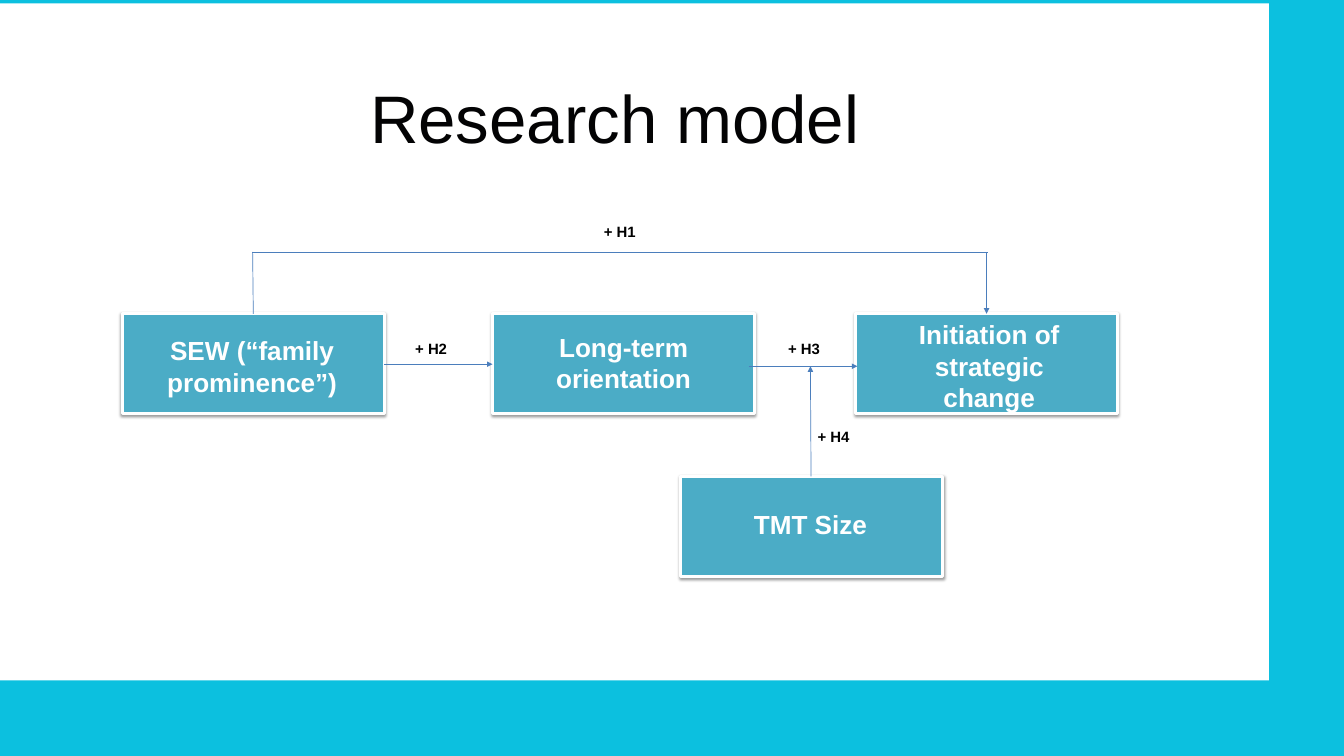
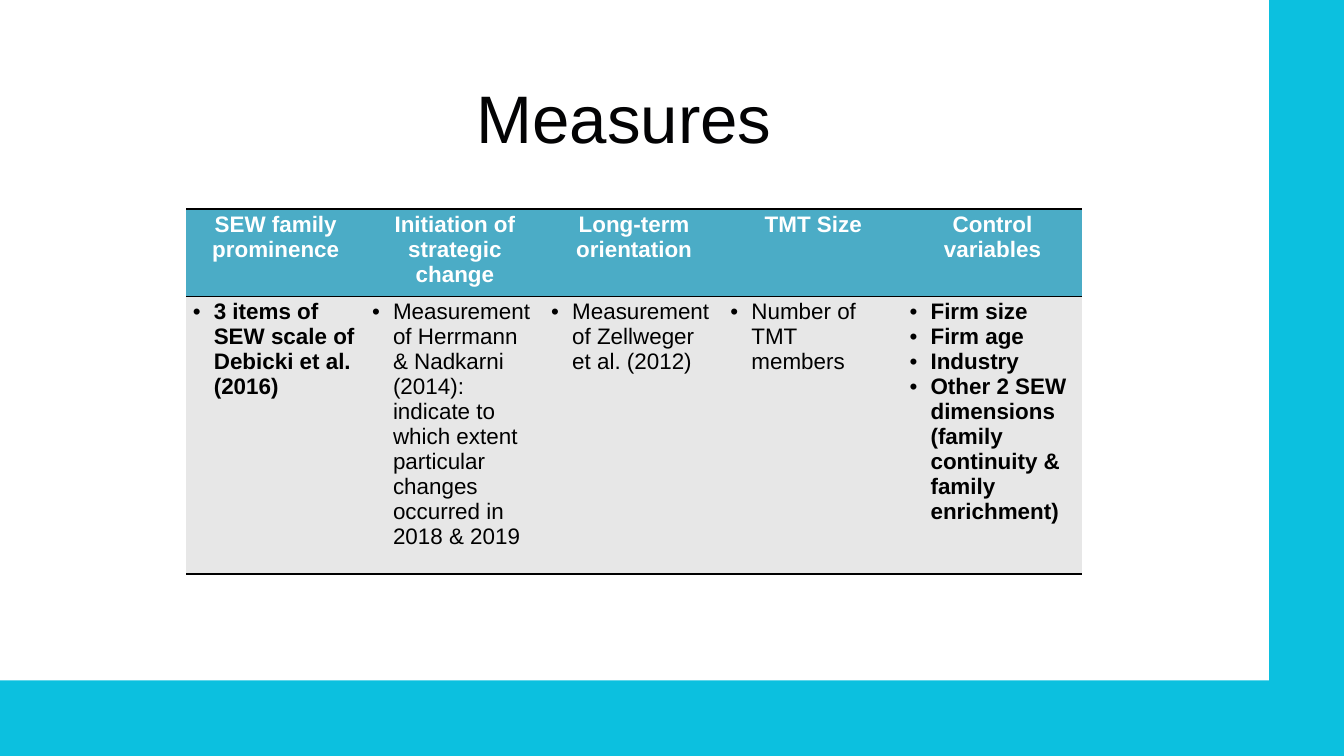
from dataclasses import dataclass

from lxml import etree
from pptx import Presentation
from pptx.dml.color import RGBColor
from pptx.enum import shapes, text
from pptx.oxml import parse_xml
from pptx.oxml.ns import nsdecls, qn
from pptx.util import Pt


@dataclass(frozen=True)
class Theme:
    back: str = "0CC0DF"
    panel: str = "FFFFFF"
    title: str = "030304"
    box: str = "4BACC6"
    line: str = "4B7EBC"
    cell: str = "E7E7E7"
    dark: str = "000000"
    light: str = "FFFFFF"
    font: str = "Arial"
    head: int = 72
    name: int = 28
    body: int = 24
    tag: int = 16


LOOK = Theme()
PLAIN_GRID = "{2D5ABB26-0587-4C30-8999-92F81FD0307C}"
MID, LEFT = text.PP_ALIGN.CENTER, text.PP_ALIGN.LEFT
BOX_W, BOX_H, ROW_Y = 280.8, 107.3, 336.2
LABEL_W = 233.3
TAG_SIZE = (79.2, 26.6)

# Box left and top, then label left, top and height
BOXES = [
    ("SEW (“family prominence”)", 131, ROW_Y, 153.4, 355, 75),
    ("Long-term orientation", 527.8, ROW_Y, 551.5, 351.4, 75),
    ("Initiation of strategic change", 916.6, ROW_Y, 943.2, 337.7, 108.7),
    ("TMT Size", 729.4, 510.5, 751.7, 541.4, 41),
]
# Start, end, arrowhead
LINKS = [
    ((411.8, 390.2), (527.8, 390.2), True),
    ((802, 392.4), (918.7, 392.4), True),
    ((271.4, ROW_Y), (270.7, 270), False),
    ((270, 270), (1058.4, 270), False),
    ((1057, 270), (1057, ROW_Y), True),
    ((869, 510.5), (868.3, 392.4), True),
]
TAGS = [
    ("+ H1", 640, 235.4),
    ("+ H2", 437.8, 360.7),
    ("+ H3", 837.4, 360),
    ("+ H4", 869, 454.3),
]
# Heading, bullets, bold bullets
MEASURES = [
    ("SEW family prominence",
     ["3 items of SEW scale of Debicki et al. (2016)"], True),
    ("Initiation of strategic change",
     ["Measurement of Herrmann & Nadkarni (2014): indicate to which extent "
      "particular changes occurred in 2018 & 2019"], False),
    ("Long-term orientation",
     ["Measurement of Zellweger et al. (2012)"], False),
    ("TMT Size", ["Number of TMT members"], False),
    ("Control variables",
     ["Firm size", "Firm age", "Industry",
      "Other 2 SEW dimensions (family continuity & family enrichment)"], True),
]


def paint(fill, color):
    fill.solid()
    fill.fore_color.rgb = RGBColor.from_string(color)


def write(para, words, size, color, bold=False, align=LEFT):
    para.alignment = align
    run = para.add_run()
    run.text = words
    style = {"name": LOOK.font, "size": Pt(size), "bold": bold}
    for key, value in style.items():
        setattr(run.font, key, value)
    run.font.color.rgb = RGBColor.from_string(color)


def add_text(slide, area, words, size, color, bold=False, align=LEFT, inset=None):
    frame = slide.shapes.add_textbox(*map(Pt, area)).text_frame
    frame.word_wrap = True
    frame.auto_size = text.MSO_AUTO_SIZE.SHAPE_TO_FIT_TEXT
    if inset is not None:
        for side in ("left", "top", "right", "bottom"):
            setattr(frame, f"margin_{side}", Pt(inset))
    write(frame.paragraphs[0], words, size, color, bold, align)


def add_rect(slide, area, color):
    rect = slide.shapes.add_shape(shapes.MSO_SHAPE.RECTANGLE, *map(Pt, area))
    rect.shadow.inherit = False
    paint(rect.fill, color)
    rect.line.fill.background()
    return rect


def add_box(slide, left, top):
    """Add a white-edged box with a soft shadow below it."""
    box = add_rect(slide, (left, top, BOX_W, BOX_H), LOOK.box)
    paint(box.line.fill, LOOK.light)
    box.line.width = Pt(3)
    glow = box.element.spPr.find(qn("a:effectLst"))
    glow.append(parse_xml(
        f'<a:outerShdw {nsdecls("a")} blurRad="{Pt(3.1)}" dist="{Pt(1.6)}" '
        f'dir="5400000" rotWithShape="0"><a:srgbClr val="{LOOK.dark}">'
        '<a:alpha val="38000"/></a:srgbClr></a:outerShdw>'))


def add_link(slide, start, end, arrow):
    link = slide.shapes.add_connector(
        shapes.MSO_CONNECTOR.STRAIGHT, *map(Pt, start + end))
    paint(link.line.fill, LOOK.line)
    link.line.width = Pt(0.75)
    props = link.element.spPr
    if arrow:
        etree.SubElement(props.find(qn("a:ln")), qn("a:tailEnd"), type="triangle")
    etree.SubElement(props, qn("a:effectLst"))


def add_bullet(para):
    props = para._p.get_or_add_pPr()
    props.set("marL", str(Pt(22.5)))
    props.set("indent", str(Pt(-22.5)))
    tint = etree.SubElement(props, qn("a:buClr"))
    etree.SubElement(tint, qn("a:srgbClr"), val=LOOK.dark)
    etree.SubElement(props, qn("a:buFont"), typeface=LOOK.font)
    etree.SubElement(props, qn("a:buChar"), char="•")


def fill_cell(cell, lines, back, color, bold, edges, bullet=False):
    """Fill a cell; edges maps a border tag to its width."""
    props = cell._tc.get_or_add_tcPr()
    for tag, width in edges.items():
        props.append(parse_xml(
            f'<a:{tag} {nsdecls("a")} w="{Pt(width)}"><a:solidFill>'
            f'<a:srgbClr val="{LOOK.dark}"/></a:solidFill></a:{tag}>'))
    paint(cell.fill, back)
    frame = cell.text_frame
    for i, words in enumerate(lines):
        para = frame.add_paragraph() if i else frame.paragraphs[0]
        write(para, words, LOOK.body, color, bold, LEFT if bullet else MID)
        if bullet:
            add_bullet(para)


def add_grid(slide, data):
    area = (199.4, 223.9, 960, 391)
    frame = slide.shapes.add_table(2, len(data), *map(Pt, area))
    grid = frame.table
    grid.horz_banding = False
    next(frame.element.iter(qn("a:tableStyleId"))).text = PLAIN_GRID
    for row, height in zip(grid.rows, (93.6, 297.4)):
        row.height = Pt(height)
    for i, (head, items, bold) in enumerate(data):
        grid.columns[i].width = Pt(area[2] / len(data))
        fill_cell(grid.cell(0, i), [head], LOOK.box, LOOK.light, True,
                  {"lnT": 2, "lnB": 1})
        fill_cell(grid.cell(1, i), items, LOOK.cell, LOOK.dark, bold,
                  {"lnT": 1, "lnB": 2}, bullet=True)


def add_slide(deck, title, top):
    """Start a slide with its backdrop, white panel and title."""
    slide = deck.slides.add_slide(deck.slide_layouts[6])
    paint(slide.background.fill, LOOK.back)
    add_rect(slide, (0, top, 1359.4, 729 - top), LOOK.panel)
    add_text(slide, (225.4, 82, 886.3, 87), title, LOOK.head, LOOK.title,
             align=MID, inset=0)
    return slide


def add_model(deck):
    slide = add_slide(deck, "Research model ", 3.6)
    for words, left, top, *_ in BOXES:
        add_box(slide, left, top)
    for words, _, _, left, top, height in BOXES:
        add_text(slide, (left, top, LABEL_W, height), words, LOOK.name,
                 LOOK.light, True, MID)
    for link in LINKS:
        add_link(slide, *link)
    for words, left, top in TAGS:
        add_text(slide, (left, top, *TAG_SIZE), words, LOOK.tag, LOOK.dark, True)


def main():
    deck = Presentation()
    deck.slide_width, deck.slide_height = Pt(1440), Pt(810)
    add_model(deck)
    add_grid(add_slide(deck, "Measures", 0), MEASURES)
    deck.save("out.pptx")


if __name__ == "__main__":
    main()
